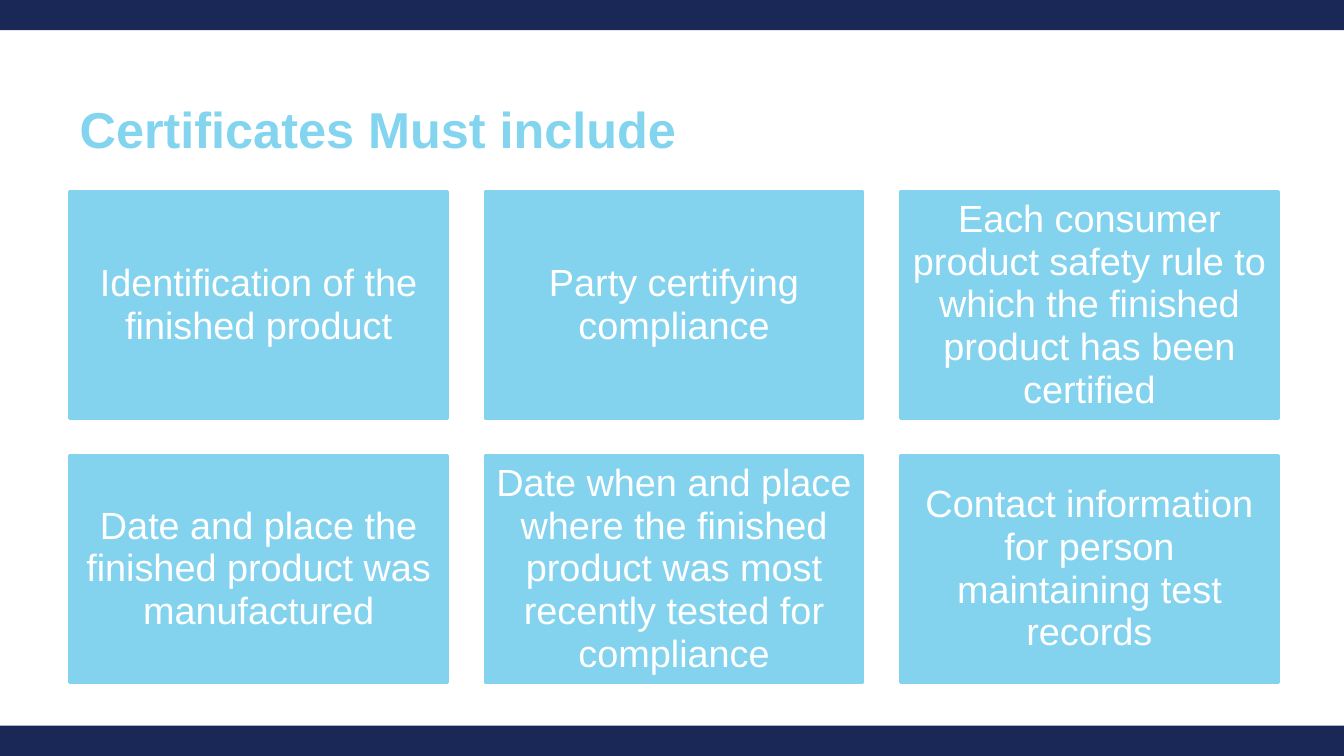
from pptx import Presentation
from pptx.dml.color import RGBColor
from pptx.enum import shapes, text
from pptx.util import Inches, Pt

NAVY = RGBColor(0x1A, 0x28, 0x57)
TITLE_BLUE = RGBColor(0x83, 0xD4, 0xEF)
CARD_BLUE = RGBColor(0x83, 0xD3, 0xEF)
WHITE = RGBColor(0xFF, 0xFF, 0xFF)


def write(frame, words, size, color, bold=False, align=text.PP_ALIGN.LEFT,
          anchor=text.MSO_ANCHOR.TOP, inset=0.1, top_inset=0.1, spacing=1.0):
    frame.word_wrap = True
    frame.auto_size = text.MSO_AUTO_SIZE.NONE
    frame.vertical_anchor = anchor
    frame.margin_left = frame.margin_right = frame.margin_bottom = Inches(inset)
    frame.margin_top = Inches(top_inset)
    paragraph = frame.paragraphs[0]
    paragraph.alignment = align
    paragraph.line_spacing = spacing
    paragraph.space_before = Pt(0)
    run = paragraph.add_run()
    run.text = words
    run.font.name = "Arial"
    run.font.size = Pt(size)
    run.font.bold = bold
    run.font.color.rgb = color


def add_block(left, top, width, height, color):
    block = slide.shapes.add_shape(
        shapes.MSO_SHAPE.RECTANGLE,
        Inches(left), Inches(top), Inches(width), Inches(height))
    block.shadow.inherit = False
    block.fill.solid()
    block.fill.fore_color.rgb = color
    block.line.fill.background()
    return block


deck = Presentation()
deck.slide_width = Inches(13.33)
deck.slide_height = Inches(7.5)
slide = deck.slides.add_slide(deck.slide_layouts[5])

# Navy bands along the top and bottom edges
for band_top in (0, 7.2):
    add_block(0, band_top, 13.33, 0.3, NAVY)

# Heading
heading = slide.shapes.title
heading.left, heading.top = Inches(0.69), Inches(0.85)
heading.width, heading.height = Inches(11.99), Inches(1.22)
write(heading.text_frame, "Certificates Must include", 36, TITLE_BLUE,
      bold=True, top_inset=0.12)

# Required items in a grid of three columns
required_items = [
    "Identification of the finished product",
    "Party certifying compliance",
    "Each consumer product safety rule to which the finished product has been certified",
    "Date and place the finished product was manufactured",
    "Date when and place where the finished product was most recently tested for compliance",
    "Contact information for person maintaining test records",
]
CARD_WIDTH, CARD_HEIGHT, GAP = 3.75, 2.25, 0.37
for index, item in enumerate(required_items):
    row, column = divmod(index, 3)
    card = add_block(0.69 + column * (CARD_WIDTH + GAP),
                     1.9 + row * (CARD_HEIGHT + GAP),
                     CARD_WIDTH, CARD_HEIGHT, CARD_BLUE)
    card.line.color.rgb = CARD_BLUE
    card.line.width = Pt(2)
    write(card.text_frame, item, 27, WHITE, align=text.PP_ALIGN.CENTER,
          anchor=text.MSO_ANCHOR.MIDDLE, inset=0.11, top_inset=0.11, spacing=0.94)

deck.save("out.pptx")
